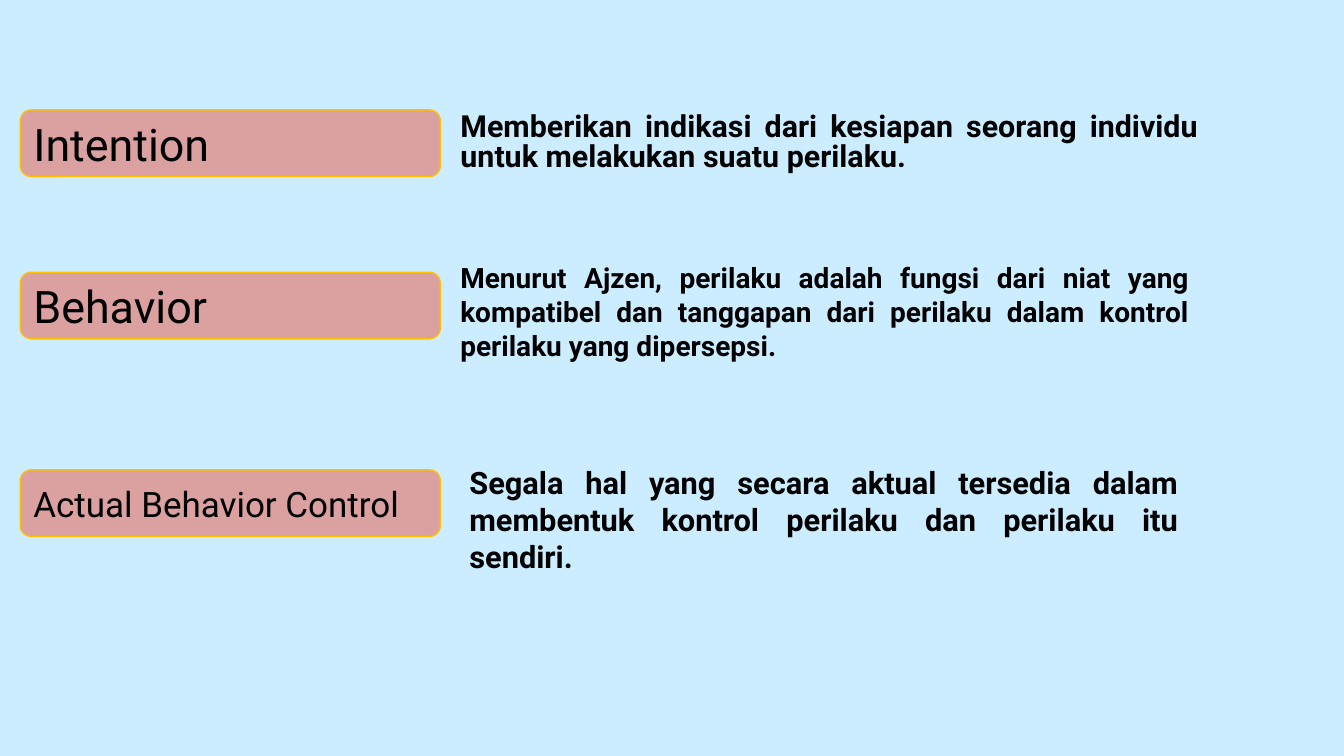
from lxml.etree import SubElement
from pptx import Presentation
from pptx.dml.color import RGBColor
from pptx.enum.shapes import MSO_SHAPE as Shape
from pptx.enum.text import MSO_ANCHOR as Anchor, MSO_AUTO_SIZE as AutoSize, PP_ALIGN as Align
from pptx.oxml.ns import qn
from pptx.util import Cm, Pt

INTENTION = "Memberikan indikasi dari kesiapan seorang individu untuk melakukan suatu perilaku."
BEHAVIOR = ("Menurut Ajzen, perilaku adalah fungsi dari niat yang kompatibel dan tanggapan "
            "dari perilaku dalam kontrol perilaku yang dipersepsi.")
CONTROL = ("Segala hal yang secara aktual tersedia dalam membentuk kontrol perilaku "
           "dan perilaku itu sendiri.")


def paint(color, hex_color):
    """Set a colour from a hex string."""
    color.rgb = RGBColor.from_string(hex_color)


def add_run(paragraph, text, size, font="Roboto", bold=False):
    """Append one black run to a paragraph."""
    run = paragraph.add_run()
    run.text = text
    run.font.name = font
    run.font.size = Pt(size)
    run.font.bold = bold
    paint(run.font.color, "000000")


def add_term(slide, top, term, size):
    """Draw the translucent rounded label of a term."""
    label = slide.shapes.add_shape(Shape.ROUNDED_RECTANGLE, Cm(0.51), Cm(top), Cm(10.59), Cm(1.68))
    label.shadow.inherit = False
    label.fill.solid()
    paint(label.fill.fore_color, "EE462D")
    tint = label.fill._xPr.find(qn("a:solidFill"))[0]
    SubElement(tint, qn("a:alpha"), val="45000")
    paint(label.line.color, "FFC000")
    label.line.width = Pt(1)
    label.text_frame.word_wrap = True
    label.text_frame.vertical_anchor = Anchor.MIDDLE
    paragraph = label.text_frame.paragraphs[0]
    paragraph.alignment = Align.LEFT
    add_run(paragraph, term, size)


def add_lead_meaning(slide, box, meaning, size):
    """Fill the body placeholder with a justified hanging paragraph."""
    body = slide.placeholders[1]
    body.left, body.top, body.width, body.height = map(Cm, box)
    body.text_frame.word_wrap = True
    body.text_frame.auto_size = AutoSize.NONE
    body.text_frame.vertical_anchor = Anchor.TOP
    paragraph = body.text_frame.paragraphs[0]
    paragraph.alignment = Align.JUSTIFY
    paragraph.line_spacing = 0.8
    paragraph.space_before = Pt(0)
    properties = paragraph._p.get_or_add_pPr()
    properties.set("marL", str(Cm(0.25)))
    properties.set("indent", str(Cm(-0.25)))
    SubElement(properties, qn("a:buNone"))
    add_run(paragraph, "\t", 27.9, "Comic Neue")
    add_run(paragraph, meaning, size, bold=True)


def add_meaning(slide, box, meaning, size):
    """Add a justified text box with the meaning of a term."""
    frame = slide.shapes.add_textbox(*map(Cm, box)).text_frame
    frame.word_wrap = True
    frame.auto_size = AutoSize.SHAPE_TO_FIT_TEXT
    paragraph = frame.paragraphs[0]
    paragraph.alignment = Align.JUSTIFY
    add_run(paragraph, meaning, size, bold=True)


def build_terms_slide(deck):
    """Build the slide that pairs three terms with their meanings."""
    slide = deck.slides.add_slide(deck.slide_layouts[1])
    title = slide.shapes.title.element
    title.getparent().remove(title)
    slide.background.fill.solid()
    paint(slide.background.fill.fore_color, "CCECFF")

    add_lead_meaning(slide, (11.1, 2.57, 19.35, 2.06), INTENTION, 21.7)
    add_term(slide, 2.77, "Intention", 32)
    add_term(slide, 6.86, "Behavior", 32)
    add_meaning(slide, (11.35, 6.45, 18.87, 2.82), BEHAVIOR, 20)
    add_term(slide, 11.84, "Actual Behavior Control", 25)
    add_meaning(slide, (11.58, 11.56, 18.36, 3.07), CONTROL, 22)


def main():
    """Create and save the presentation."""
    deck = Presentation()
    deck.slide_width, deck.slide_height = Cm(33.87), Cm(19.05)
    build_terms_slide(deck)
    deck.save("out.pptx")


if __name__ == "__main__":
    main()
